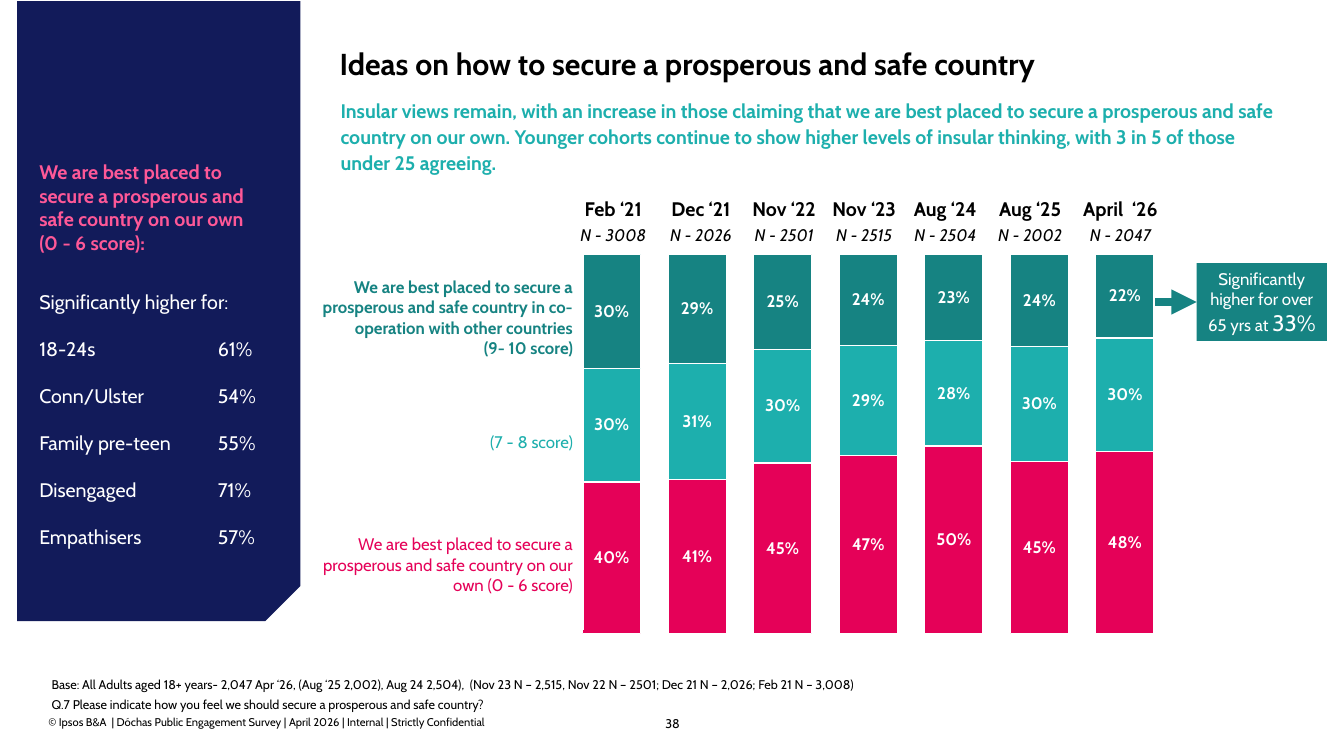
from lxml import etree
from pptx import Presentation
from pptx import util as u
from pptx.chart.data import CategoryChartData
from pptx.dml.color import RGBColor
from pptx.enum import chart as ch, shapes, text
from pptx.oxml import parse_xml
from pptx.oxml.ns import nsdecls, qn

COLORS = {
    "black": "000000", "white": "FFFFFF", "navy": "121B5A", "pink": "FE5897",
    "dark_teal": "168382", "teal": "1DAFAD", "magenta": "E50158",
}
LEFT, CENTER, RIGHT = text.PP_ALIGN.LEFT, text.PP_ALIGN.CENTER, text.PP_ALIGN.RIGHT
TOP, MIDDLE, BOTTOM = text.MSO_ANCHOR.TOP, text.MSO_ANCHOR.MIDDLE, text.MSO_ANCHOR.BOTTOM


def rgb(name):
    return RGBColor.from_string(COLORS[name])


class Deck:
    """Holds the font and the current slide, and adds styled elements to it."""

    font = "Cabin"

    def __init__(self, width, height):
        self.prs = Presentation()
        self.prs.slide_width, self.prs.slide_height = u.Cm(width), u.Cm(height)
        self.s = self.prs.slides.add_slide(self.prs.slide_layouts[6])

    def style(self, font, size, color, bold=False, italic=False):
        font.name, font.size = self.font, u.Pt(size)
        font.bold, font.italic = bold, italic
        font.color.rgb = rgb(color)

    def run(self, p, words, *style):
        r = p.add_run()
        r.text = words
        self.style(r.font, *style)

    def paragraphs(self, tf, lines, *style, align=LEFT, spacing=None, before=0, after=0, tab=None):
        tf.word_wrap = True
        for i, line in enumerate(lines):
            p = tf.add_paragraph() if i else tf.paragraphs[0]
            p.alignment = align
            if spacing:
                p.line_spacing = spacing
            p.space_before, p.space_after = u.Pt(before if i else 0), u.Pt(after)
            if tab:
                tabs = etree.SubElement(p._p.get_or_add_pPr(), qn("a:tabLst"))
                etree.SubElement(tabs, qn("a:tab"), pos=str(u.Cm(tab)), algn="l")
            self.run(p, line, *style)

    def text(self, at, lines, *style, anchor=TOP, inset=True, **layout):
        tf = self.s.shapes.add_textbox(*map(u.Cm, at)).text_frame
        tf.vertical_anchor = anchor
        if not inset:
            tf.margin_left = tf.margin_top = tf.margin_right = tf.margin_bottom = 0
        self.paragraphs(tf, lines, *style, **layout)

    def shape(self, kind, at, color):
        sp = self.s.shapes.add_shape(kind, *map(u.Cm, at))
        sp.shadow.inherit = False
        sp.fill.solid()
        sp.fill.fore_color.rgb = rgb(color)
        sp.line.fill.background()
        return sp

    def arrow_to(self, sp, x, color, width):
        y = sp.top + sp.height // 2
        cx = self.s.shapes.add_connector(shapes.MSO_CONNECTOR.STRAIGHT, u.Cm(x), y, sp.left, y)
        cx.end_connect(sp, 1)
        cx.line.color.rgb, cx.line.width = rgb(color), u.Pt(width)
        sp_pr = cx._element.spPr
        etree.SubElement(sp_pr.find(qn("a:ln")), qn("a:tailEnd"), type="triangle")
        etree.SubElement(sp_pr, qn("a:effectLst"))

    def table(self, left, top, cols, rows, cells, align, inset=True):
        at = map(u.Cm, (left, top, sum(cols), sum(rows)))
        tbl = self.s.shapes.add_table(len(rows), len(cols), *at).table
        tbl.first_row = tbl.horz_banding = False
        for col, width in zip(tbl.columns, cols):
            col.width = u.Cm(width)
        for row, height, contents in zip(tbl.rows, rows, cells):
            row.height = u.Cm(height)
            for cell, (lines, *style) in zip(row.cells, contents):
                cell.fill.background()
                cell.vertical_anchor = MIDDLE
                if not inset:
                    cell.margin_left = cell.margin_right = cell.margin_bottom = 0
                    cell.margin_top = u.Cm(0.02)
                self.paragraphs(cell.text_frame, lines, *style, align=align)

    def stacked_chart(self, at, categories, series):
        data = CategoryChartData()
        data.categories = categories
        for name, values, _ in series:
            data.add_series(name, values)
        chart = self.s.shapes.add_chart(
            ch.XL_CHART_TYPE.COLUMN_STACKED_100, *map(u.Cm, at), data).chart
        chart.has_legend = chart.has_title = False
        self.style(chart.font, 12, "white", True)
        chart.value_axis.has_major_gridlines = False
        chart.value_axis.reverse_order = True
        chart.value_axis.visible = chart.category_axis.visible = False
        plot = chart.plots[0]
        plot.gap_width, plot.overlap, plot.vary_by_categories = 47, 100, False
        for ser, (_, _, color) in zip(plot.series, series):
            ser.format.fill.solid()
            ser.format.fill.fore_color.rgb = rgb(color)
            ser.format.line.color.rgb = rgb("white")
            ser.format.line.width = u.Pt(1)
            labels = ser.data_labels
            labels.show_value = True
            labels.number_format, labels.number_format_is_linked = '#"%"', False
            labels.position = ch.XL_LABEL_POSITION.CENTER
            self.style(labels.font, 12, "white", True)
        area = chart._chartSpace.chart.plotArea
        for old in area.findall(qn("c:layout")):
            area.remove(old)
        area.insert(0, parse_xml(
            f'<c:layout {nsdecls("c")}><c:manualLayout><c:layoutTarget val="inner"/>'
            '<c:xMode val="edge"/><c:yMode val="edge"/><c:x val="0"/><c:y val="0.03"/>'
            '<c:w val="1"/><c:h val="0.92"/></c:manualLayout></c:layout>'))


def main():
    d = Deck(33.86, 19.05)

    d.text((16.26, 18.01, 1.37, 0.38), ["38"], 9, "black",
           inset=False, align=CENTER, spacing=1.1)
    d.text((1.22, 18.03, 15.49, 0.33),
           ["© Ipsos B&A  | Dóchas Public Engagement Survey | April 2026 | Internal | Strictly Confidential"],
           8, "black", inset=False, anchor=BOTTOM)
    d.text((8.31, 1.09, 24, 1.14), ["Ideas on how to secure a prosperous and safe country"],
           21.6, "black", True, anchor=MIDDLE, spacing=0.9)
    d.text((8.33, 2.31, 24.26, 2.01),
           ["Insular views remain, with an increase in those claiming that we are best placed to secure "
            "a prosperous and safe country on our own. Younger cohorts continue to show higher levels "
            "of insular thinking, with 3 in 5 of those under 25 agreeing."],
           14, "teal", True, spacing=1.1)
    d.text((1.3, 16.99, 25.96, 0.91),
           ["Base: All Adults aged 18+ years- 2,047 Apr ‘26, (Aug ‘25 2,002), Aug 24 2,504),  "
            "(Nov 23 N – 2,515, Nov 22 N – 2501; Dec 21 N – 2,026; Feb 21 N – 3,008)",
            "Q.7 Please indicate how you feel we should secure a prosperous and safe country?"],
           9, "black", inset=False, spacing=1.15, after=2)

    d.stacked_chart((14.33, 6.1, 15.09, 10.39), [str(n) for n in range(1, 8)], [
        ("Series 1", (30, 29, 25, 24, 23, 24, 22), "dark_teal"),
        ("Series 2", (30, 31, 30, 29, 28, 30, 30), "teal"),
        ("Series 3", (40, 41, 45, 47, 50, 45, 48), "magenta"),
    ])

    callout = d.shape(shapes.MSO_SHAPE.RECTANGLE, (30.15, 6.63, 3.28, 1.96), "dark_teal")
    d.paragraphs(callout.text_frame, ["Significantly higher for over 65 yrs at "],
                 12, "white", align=CENTER)
    d.run(callout.text_frame.paragraphs[0], "33%", 16, "white")
    d.arrow_to(callout, 29.11, "dark_teal", 6)

    panel = d.shape(shapes.MSO_SHAPE.SNIP_1_RECTANGLE, (-3.81, 4.27, 15.62, 7.14), "navy")
    panel.rotation = 90
    panel.adjustments[0] = 0.124
    d.text((0.74, 3.91, 6.1, 2.64),
           ["We are best placed to secure a prosperous and safe country on our own (0 - 6 score):"],
           14, "pink", True)
    d.text((0.74, 7.17, 6.83, 7.4),
           ["Significantly higher for:", "18-24s\t61%", "Conn/Ulster\t54%", "Family pre-teen\t55%",
            "Disengaged\t71%", "Empathisers\t57%"],
           14, "white", before=16.8, tab=4.5)

    d.table(7.65, 6.32, [7.04], [3.38, 2.92, 3.25], [
        [(["We are best placed to secure a prosperous and safe country in co-operation with other countries",
           "(9- 10 score)"], 12, "dark_teal", True)],
        [(["(7 - 8 score)"], 12, "teal")],
        [(["We are best placed to secure a prosperous and safe country on our own (0 - 6 score)"],
          12, "magenta")],
    ], RIGHT)

    waves = {"Feb ‘21": 3008, "Dec ‘21": 2026, "Nov ‘22": 2501, "Nov ‘23": 2515,
             "Aug ‘24": 2504, "Aug ‘25": 2002, "April  ‘26": 2047}
    d.table(14.33, 4.93, [2.24, 2.18, 2.01, 2.03, 2.06, 2.21, 2.34], [0.66, 0.64], [
        [([wave], 14, "black", True) for wave in waves],
        [([f"N - {n}"], 12, "black", False, True) for n in waves.values()],
    ], CENTER, inset=False)

    d.prs.save("out.pptx")


if __name__ == "__main__":
    main()
